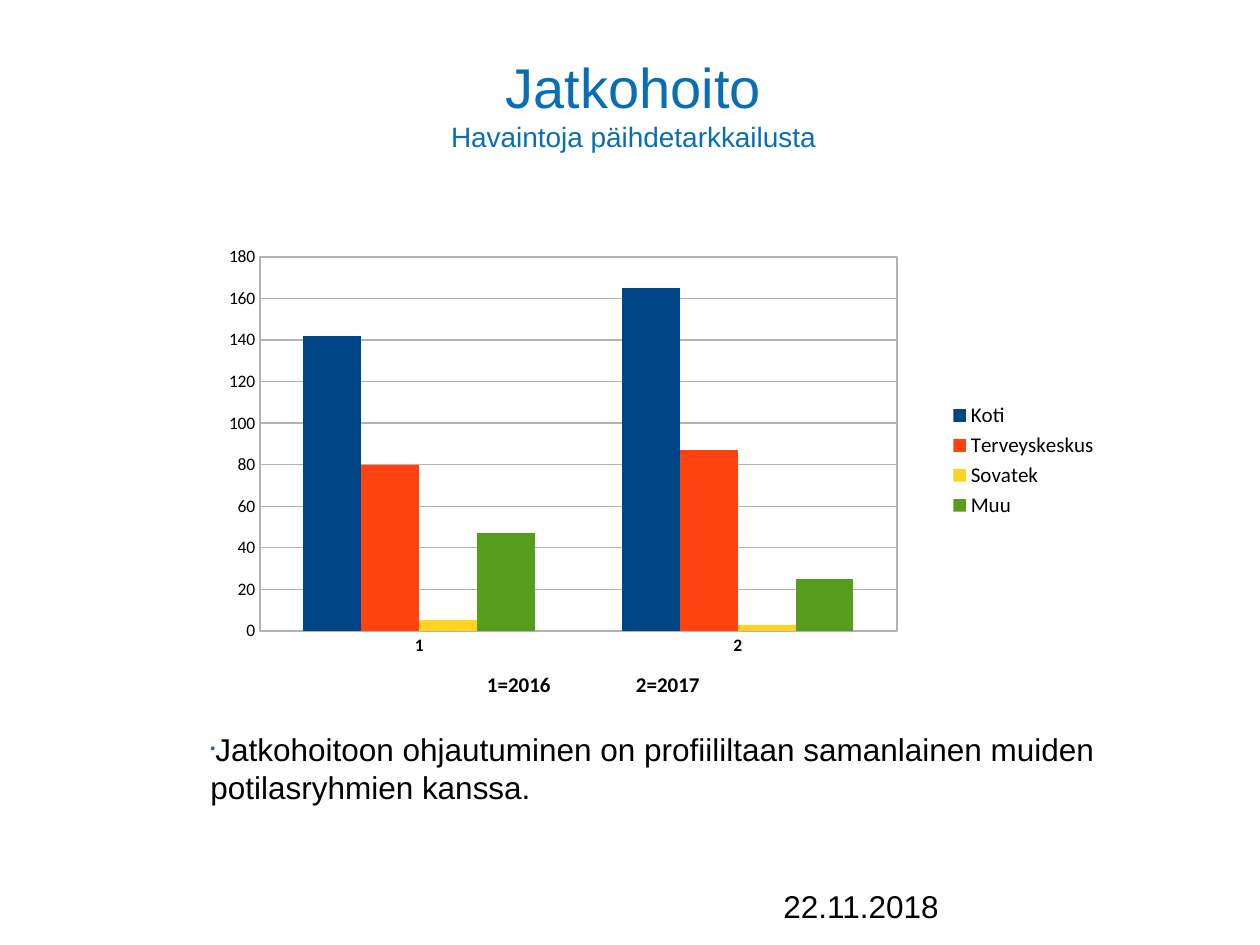
from dataclasses import dataclass

from lxml.etree import SubElement
from pptx import Presentation
from pptx.chart.data import CategoryChartData
from pptx.dml.color import RGBColor
from pptx.enum.chart import XL_CHART_TYPE as ChartType
from pptx.enum.chart import XL_LEGEND_POSITION as LegendPosition
from pptx.enum.chart import XL_TICK_MARK as TickMark
from pptx.enum.text import MSO_ANCHOR as Anchor
from pptx.enum.text import MSO_AUTO_SIZE as AutoSize
from pptx.enum.text import PP_ALIGN as Align
from pptx.oxml import parse_xml
from pptx.oxml.ns import nsdecls, qn
from pptx.util import Emu, Pt

EMU_PER_PX = 914400 / 126
COLORS = {
    "black": "000000",
    "title": "0A6EB4",
    "bullet": "0070C0",
    "grid": "B3B3B3",
}


@dataclass(frozen=True)
class Box:
    left: int
    top: int
    width: int
    height: int

    def emu(self) -> tuple:
        return tuple(px(n) for n in (self.left, self.top, self.width, self.height))


@dataclass(frozen=True)
class Series:
    name: str
    values: tuple
    color: str


SERIES = (
    Series("Koti", (142, 165), "004586"),
    Series("Terveyskeskus", (80, 87), "FF420E"),
    Series("Sovatek", (5, 3), "FFD320"),
    Series("Muu", (47, 25), "579D1C"),
)
CHART_BOX = Box(189, 198, 922, 525)
PLOT_BOX = Box(260, 257, 637, 374)


def px(length: int) -> Emu:
    return Emu(round(length * EMU_PER_PX))


def rgb(name: str) -> RGBColor:
    return RGBColor.from_string(COLORS[name])


def style_font(font, size: int, color: str = "black", name: str = "Arial", bold: bool = False) -> None:
    font.name = name
    font.size = Pt(size)
    font.bold = bold
    font.color.rgb = rgb(color)


def add_run(paragraph, text: str, size: int, color: str = "black", name: str = "Arial", bold: bool = False) -> None:
    run = paragraph.add_run()
    run.text = text
    style_font(run.font, size, color, name, bold)


def prepare_text(shape, box: Box):
    shape.left, shape.top, shape.width, shape.height = box.emu()
    frame = shape.text_frame
    frame.word_wrap = True
    frame.auto_size = AutoSize.NONE
    frame.vertical_anchor = Anchor.TOP
    return frame.paragraphs[0]


def add_title(slide) -> None:
    paragraph = prepare_text(slide.shapes.title, Box(124, 46, 1019, 90))
    paragraph.alignment = Align.CENTER
    add_run(paragraph, "Jatkohoito", 32, "title")
    paragraph.add_line_break()
    add_run(paragraph, "Havaintoja päihdetarkkailusta", 16, "title")


def add_finding(slide) -> None:
    box = Box(198, 724, 942, 86)
    right, bottom = box.left + box.width, box.top + box.height
    builder = slide.shapes.build_freeform(box.left, box.top, scale=EMU_PER_PX)
    builder.add_line_segments([(right, box.top), (right, bottom), (box.left, bottom)])
    shape = builder.convert_to_shape()
    shape.shadow.inherit = False
    shape.fill.background()
    shape.line.fill.background()
    paragraph = prepare_text(shape, box)
    paragraph.alignment = Align.LEFT
    properties = paragraph._p.get_or_add_pPr()
    color = SubElement(properties, qn("a:buClr"))
    SubElement(color, qn("a:srgbClr"), val=COLORS["bullet"])
    SubElement(properties, qn("a:buSzPct"), val="45000")
    SubElement(properties, qn("a:buFont"), typeface="Arial")
    SubElement(properties, qn("a:buChar"), char="•")
    add_run(paragraph, "Jatkohoitoon ohjautuminen on profiililtaan samanlainen muiden potilasryhmien kanssa.", 18)


def add_date(slide) -> None:
    box = Box(352, 881, 615, 32)
    paragraph = prepare_text(slide.shapes.add_textbox(*box.emu()), box)
    paragraph._p.get_or_add_pPr().set("marL", str(px(419)))
    add_run(paragraph, "22.11.2018", 18)


def add_year_key(slide) -> None:
    box = Box(487, 672, 240, 26)
    shape = slide.shapes.add_textbox(*box.emu())
    paragraph = prepare_text(shape, box)
    frame = shape.text_frame
    frame.margin_left = frame.margin_right = frame.margin_top = frame.margin_bottom = 0
    tabs = SubElement(paragraph._p.get_or_add_pPr(), qn("a:tabLst"))
    SubElement(tabs, qn("a:tab"), pos=str(px(149)), algn="l")
    add_run(paragraph, "1=2016\t2=2017", 12, name="Calibri", bold=True)


def place_plot(chart) -> None:
    plot_area = chart._chartSpace.chart.plotArea
    for layout in plot_area.findall(qn("c:layout")):
        plot_area.remove(layout)
    fractions = {
        "x": (PLOT_BOX.left - CHART_BOX.left) / CHART_BOX.width,
        "y": (PLOT_BOX.top - CHART_BOX.top) / CHART_BOX.height,
        "w": PLOT_BOX.width / CHART_BOX.width,
        "h": PLOT_BOX.height / CHART_BOX.height,
    }
    modes = "".join(f'<c:{key}Mode val="edge"/>' for key in "xy")
    sizes = "".join(f'<c:{key} val="{value:.4f}"/>' for key, value in fractions.items())
    plot_area.insert(0, parse_xml(
        f'<c:layout {nsdecls("c")}><c:manualLayout><c:layoutTarget val="inner"/>'
        f'{modes}{sizes}</c:manualLayout></c:layout>'))
    plot_area.append(parse_xml(
        f'<c:spPr {nsdecls("c", "a")}><a:noFill/><a:ln w="9525"><a:solidFill>'
        f'<a:srgbClr val="{COLORS["grid"]}"/></a:solidFill></a:ln></c:spPr>'))


def style_line(line) -> None:
    line.color.rgb = rgb("grid")
    line.width = Pt(0.75)


def add_column_chart(slide) -> None:
    data = CategoryChartData()
    data.categories = ["1", "2"]
    for series in SERIES:
        data.add_series(series.name, series.values)
    chart = slide.shapes.add_chart(ChartType.COLUMN_CLUSTERED, *CHART_BOX.emu(), data).chart
    chart.has_title = False
    style_font(chart.font, 10, name="Calibri")
    plot = chart.plots[0]
    plot.gap_width = 150
    plot.overlap = 0
    plot.vary_by_categories = False
    for drawn, series in zip(plot.series, SERIES):
        drawn.format.fill.solid()
        drawn.format.fill.fore_color.rgb = RGBColor.from_string(series.color)
    for axis, bold in ((chart.category_axis, True), (chart.value_axis, False)):
        axis.major_tick_mark = axis.minor_tick_mark = TickMark.NONE
        style_font(axis.tick_labels.font, 10, name="Calibri", bold=bold)
        style_line(axis.format.line)
    value_axis = chart.value_axis
    value_axis.minimum_scale = 0
    value_axis.maximum_scale = 180
    value_axis.major_unit = 20
    value_axis.has_major_gridlines = True
    style_line(value_axis.major_gridlines.format.line)
    chart.has_legend = True
    chart.legend.position = LegendPosition.RIGHT
    chart.legend.include_in_layout = False
    style_font(chart.legend.font, 12, name="Calibri")
    place_plot(chart)


def main() -> None:
    presentation = Presentation()
    presentation.slide_width = px(1260)
    presentation.slide_height = px(945)
    slide = presentation.slides.add_slide(presentation.slide_layouts[5])
    add_title(slide)
    add_date(slide)
    add_finding(slide)
    add_column_chart(slide)
    add_year_key(slide)
    presentation.save("out.pptx")


if __name__ == "__main__":
    main()
